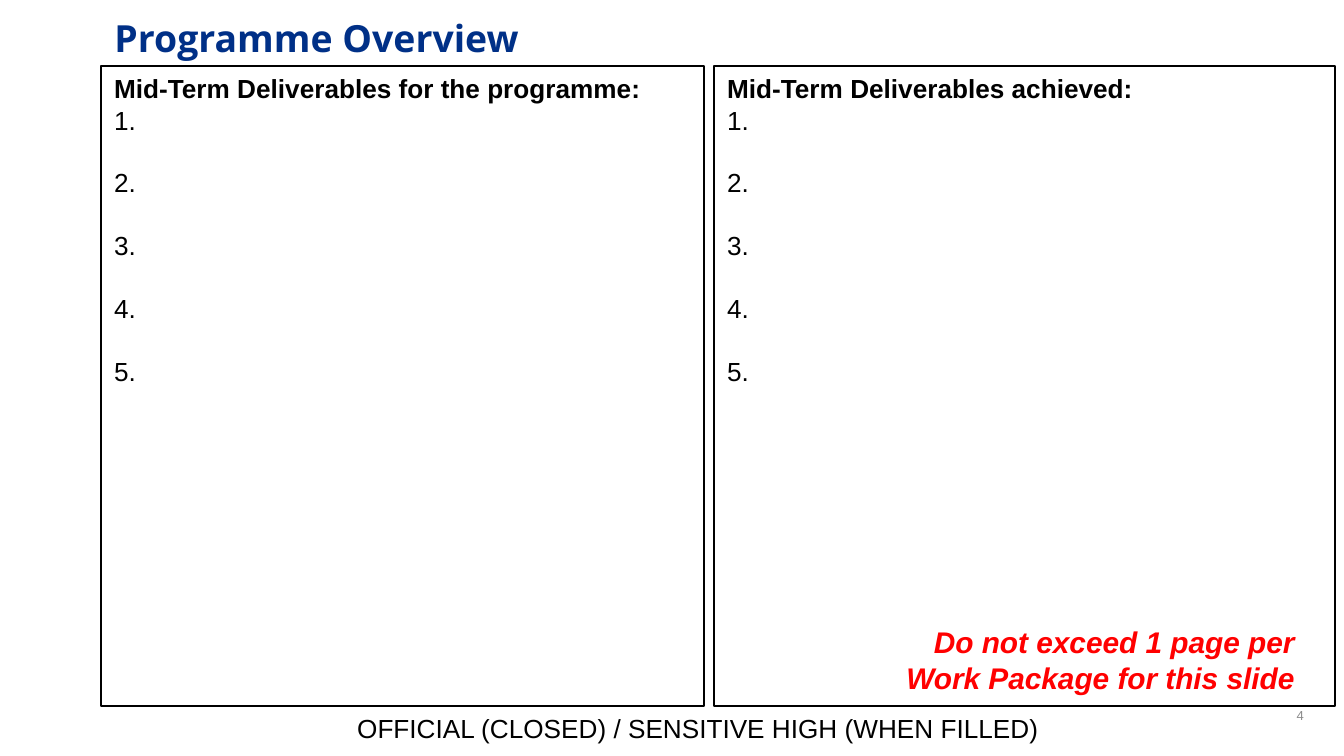
from pptx import Presentation
from pptx import util as u
from pptx.dml.color import RGBColor
from pptx.enum import shapes, text

TITLE = "Programme Overview"
NUMBERS = ["1.", "2.", "3.", "4.", "5."]
PANELS = [
    ("Mid-Term Deliverables for the programme:", 101, 603),
    ("Mid-Term Deliverables achieved:", 714, 621),
]
REMINDER = "Do not exceed 1 page per Work Package for this slide"
CLASSIFICATION = "OFFICIAL (CLOSED) / SENSITIVE HIGH (WHEN FILLED)"
PAGE = "4"

THEME = {
    "body_font": "Arial", "title_font": "Open Sans",
    "navy": "003087", "black": "000000", "red": "FF0000", "grey": "8C8C8C",
    "title": 20, "reminder": 16, "body": 14, "page": 7,
    "item_gap": 16.8, "border": 0.75,
}
SCALE = 914400 / 134.4
PANEL_TOP, PANEL_HEIGHT = 66, 640


def px(*lengths):
    return [u.Emu(round(length * SCALE)) for length in lengths]


def write(paragraph, words, size="body", color="black", font="body_font",
          bold=False, italic=False, align=text.PP_ALIGN.LEFT, before=0):
    paragraph.alignment = align
    paragraph.space_before = u.Pt(before)
    run = paragraph.add_run()
    run.text = words
    run.font.name = THEME[font]
    run.font.size = u.Pt(THEME[size])
    run.font.color.rgb = RGBColor.from_string(THEME[color])
    run.font.bold = bold
    run.font.italic = italic


def add_label(slide, place, words, anchor=text.MSO_ANCHOR.TOP, **style):
    frame = slide.shapes.add_textbox(*px(*place)).text_frame
    frame.word_wrap = True
    frame.vertical_anchor = anchor
    write(frame.paragraphs[0], words, **style)


def add_panel(slide, heading, left, width):
    panel = slide.shapes.add_shape(
        shapes.MSO_SHAPE.RECTANGLE, *px(left, PANEL_TOP, width, PANEL_HEIGHT))
    panel.shadow.inherit = False
    panel.fill.background()
    panel.line.color.rgb = RGBColor.from_string(THEME["black"])
    panel.line.width = u.Pt(THEME["border"])
    frame = panel.text_frame
    frame.word_wrap = True
    frame.vertical_anchor = text.MSO_ANCHOR.TOP
    write(frame.paragraphs[0], heading, bold=True)
    for index, number in enumerate(NUMBERS):
        write(frame.add_paragraph(), number,
              before=THEME["item_gap"] if index else 0)


def main():
    deck = Presentation()
    deck.slide_width, deck.slide_height = px(1344, 756)
    slide = deck.slides.add_slide(deck.slide_layouts[5])

    title = slide.shapes.title
    title.left, title.top, title.width, title.height = px(101, 8, 1164, 106)
    title.text_frame.vertical_anchor = text.MSO_ANCHOR.TOP
    write(title.text_frame.paragraphs[0], TITLE, size="title", color="navy",
          font="title_font", bold=True)

    add_label(slide, (1004, 695, 313, 40), PAGE, size="page", color="grey",
              align=text.PP_ALIGN.RIGHT, anchor=text.MSO_ANCHOR.MIDDLE)
    add_label(slide, (344, 706, 730, 46), CLASSIFICATION)
    for heading, left, width in PANELS:
        add_panel(slide, heading, left, width)
    add_label(slide, (851, 617, 457, 86), REMINDER, size="reminder",
              color="red", bold=True, italic=True, align=text.PP_ALIGN.RIGHT)

    deck.save("out.pptx")


if __name__ == "__main__":
    main()
